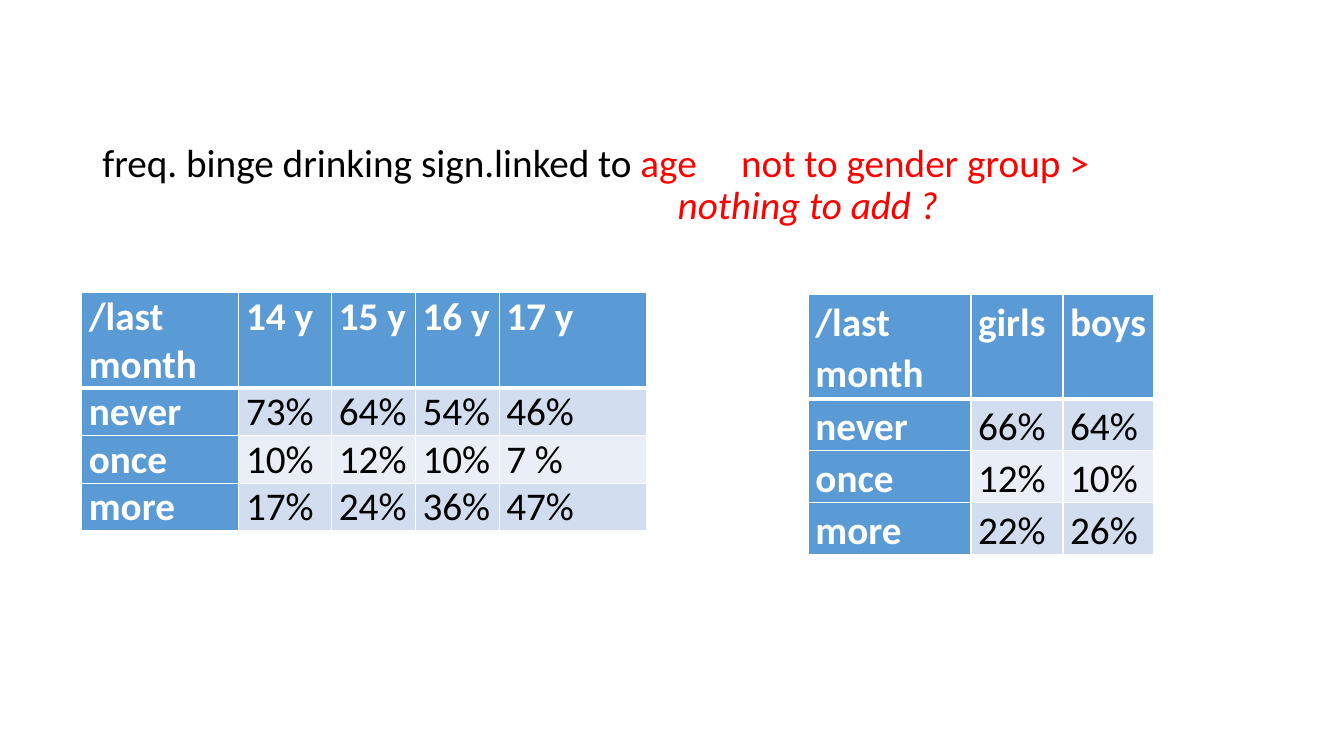
from pptx import Presentation
from pptx.dml.color import RGBColor
from pptx.enum.text import MSO_ANCHOR as Anchor
from pptx.oxml.ns import qn
from pptx.util import Cm, Pt
from lxml.etree import SubElement

FONT = "Calibri"
BLACK, WHITE, RED = "000000", "FFFFFF", "FF0000"
HEADER_BLUE = "5B9BD5"
BANDS = ["D2DEEF", "EAEFF7"]

AGE_ROWS = [
    ["/last month", "14 y", "15 y", "16 y", "17 y"],
    ["never", "73%", "64%", "54%", "46%"],
    ["once", "10%", "12%", "10%", "7 %"],
    ["more", "17%", "24%", "36%", "47%"],
]
GENDER_ROWS = [
    ["/last month", "girls", "boys"],
    ["never", "66%", "64%"],
    ["once", "12%", "10%"],
    ["more", "22%", "26%"],
]


def color(value):
    return RGBColor.from_string(value)


def style_font(font, value, bold=False):
    font.name, font.size, font.bold = FONT, Pt(28), bold
    font.color.rgb = color(value)


def add_borders(cell, bottom_width):
    properties = cell._tc.get_or_add_tcPr()
    for side, width in zip("LRTB", [1, 1, 1, bottom_width]):
        line = SubElement(properties, qn(f"a:ln{side}"), w=str(Pt(width)))
        fill = SubElement(line, qn("a:solidFill"))
        SubElement(fill, qn("a:srgbClr"), val=WHITE)


def add_headline(page, left, top, width, height):
    box = page.shapes.add_textbox(Cm(left), Cm(top), Cm(width), Cm(height))
    frame = box.text_frame
    frame.word_wrap = True
    frame.vertical_anchor = Anchor.MIDDLE

    finding = frame.paragraphs[0]
    remark = frame.add_paragraph()
    for para in (finding, remark):
        para.line_spacing = 0.9
        style_font(para.font, RED)

    tabs = SubElement(finding._p.get_or_add_pPr(), qn("a:tabLst"))
    finding._p.pPr.insert(1, tabs)
    SubElement(tabs, qn("a:tab"), pos=str(Cm(16.1)), algn="l")
    span = finding.add_run()
    span.text = "freq. binge drinking sign.linked to "
    span.font.color.rgb = color(BLACK)
    finding.add_run().text = "age\tnot to gender group >"

    remark._p.get_or_add_pPr().set("marL", str(Cm(14.5)))
    remark.font.italic = True
    remark.add_run().text = "nothing to add ?"


def add_frequency_table(page, left, top, widths, row_height, rows,
                        line_spacing=1.0, top_margin=0):
    heights = [2 * row_height] + [row_height] * (len(rows) - 1)
    table = page.shapes.add_table(
        len(rows), len(widths), Cm(left), Cm(top),
        Cm(sum(widths)), Cm(sum(heights))).table
    table.first_col = True
    for column, width in zip(table.columns, widths):
        column.width = Cm(width)
    for row, height in zip(table.rows, heights):
        row.height = Cm(height)

    for r, texts in enumerate(rows):
        for c, text in enumerate(texts):
            heading = r == 0 or c == 0
            cell = table.cell(r, c)
            cell.margin_left = cell.margin_right = Cm(0.18)
            cell.margin_top, cell.margin_bottom = Cm(top_margin), 0
            add_borders(cell, 3 if r == 0 else 1)
            cell.fill.solid()
            cell.fill.fore_color.rgb = color(
                HEADER_BLUE if heading else BANDS[(r - 1) % 2])
            para = cell.text_frame.paragraphs[0]
            para.line_spacing = line_spacing
            style_font(para.font, WHITE if heading else BLACK, heading)
            para.add_run().text = text


def main():
    deck = Presentation()
    deck.slide_width, deck.slide_height = Cm(33.87), Cm(19.05)
    page = deck.slides.add_slide(deck.slide_layouts[6])
    add_headline(page, 2.33, 1.01, 29.21, 7.36)
    add_frequency_table(page, 2.06, 7.38, [3.96, 2.34, 2.11, 2.11, 3.71],
                        1.2, AGE_ROWS)
    add_frequency_table(page, 20.37, 7.43, [4.1, 2.32, 2.29],
                        1.31, GENDER_ROWS, 1.07, 0.02)
    deck.save("out.pptx")


if __name__ == "__main__":
    main()
